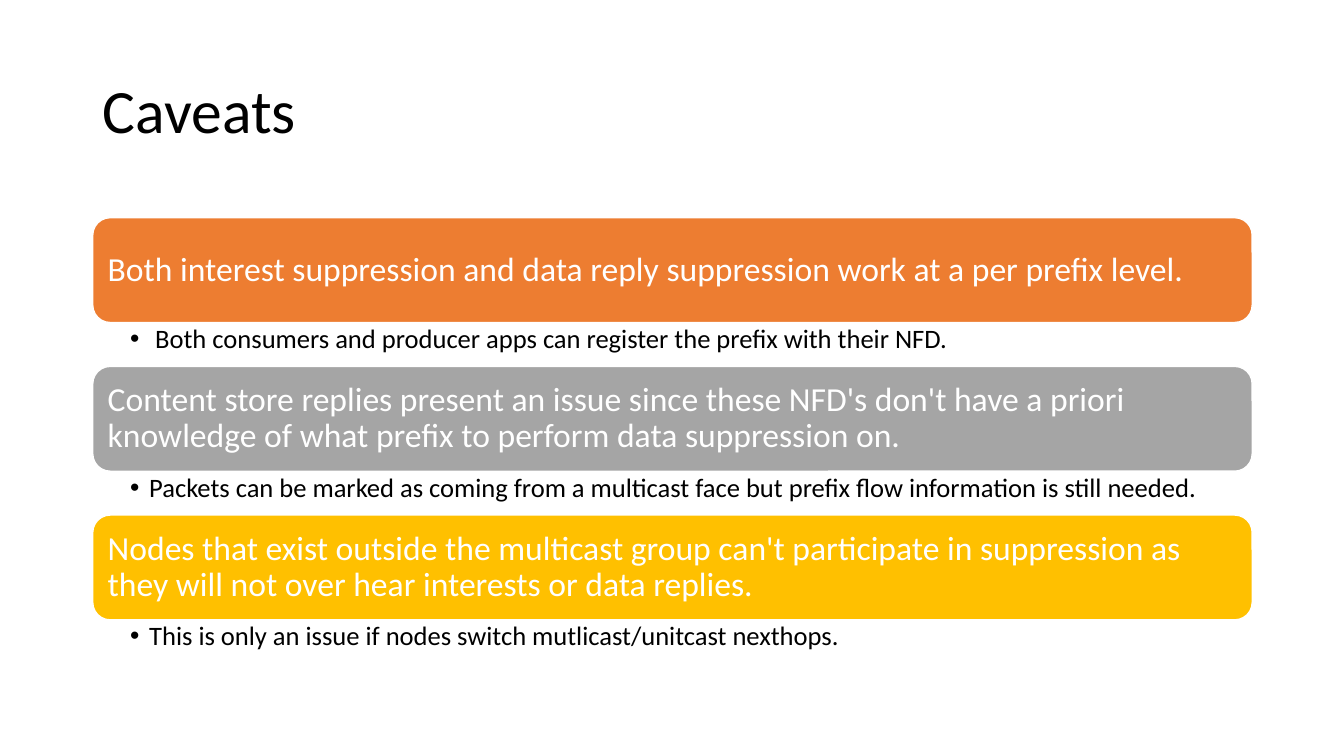
from lxml import etree
from pptx import Presentation
from pptx.dml.color import RGBColor
from pptx.enum.shapes import MSO_SHAPE
from pptx.enum.text import MSO_ANCHOR, MSO_AUTO_SIZE, PP_ALIGN
from pptx.oxml.ns import qn
from pptx.util import Inches, Pt

ROUNDED = MSO_SHAPE.ROUNDED_RECTANGLE
MIDDLE, TOP = MSO_ANCHOR.MIDDLE, MSO_ANCHOR.TOP
LEFT_ALIGNED = PP_ALIGN.LEFT
FIXED_SIZE = MSO_AUTO_SIZE.NONE

HEADING = "Caveats"
CAVEATS = [
    ("ED7D31",
     "Both interest suppression and data reply suppression work at a per prefix level.",
     " Both consumers and producer apps can register the prefix with their NFD."),
    ("A5A5A5",
     "Content store replies present an issue since these NFD's don't have a priori knowledge of what prefix to perform data suppression on.",
     "Packets can be marked as coming from a multicast face but prefix flow information is still needed."),
    ("FFC000",
     "Nodes that exist outside the multicast group can't participate in suppression as they will not over hear interests or data replies.",
     "This is only an issue if nodes switch mutlicast/unitcast nexthops."),
]

LEFT, WIDTH = 0.92, 11.5
FIRST_TOP, PITCH = 2.16, 1.475
BANNER_HEIGHT, DETAIL_HEIGHT = 1.04, 0.43
HANGING = 0.19

HEADING_STYLE = {"size": Pt(44), "color": "000000", "anchor": MIDDLE,
                 "insets": (0.1, 0.05, 0.1, 0.05)}
BANNER_STYLE = {"size": Pt(24), "color": "FFFFFF", "anchor": MIDDLE,
                "insets": (0.1, 0.1, 0.1, 0.1)}
DETAIL_STYLE = {"size": Pt(19), "color": "000000", "anchor": TOP,
                "insets": (0.37, 0.03, 0.19, 0.03)}


def rgb(value):
    return RGBColor.from_string(value)


def write(holder, text, style):
    frame = holder.text_frame
    frame.text = text
    left, top, right, bottom = map(Inches, style["insets"])
    frame_format = {
        "word_wrap": True, "auto_size": FIXED_SIZE,
        "vertical_anchor": style["anchor"],
        "margin_left": left, "margin_top": top,
        "margin_right": right, "margin_bottom": bottom,
    }
    for name, value in frame_format.items():
        setattr(frame, name, value)
    paragraph = frame.paragraphs[0]
    paragraph.alignment = LEFT_ALIGNED
    paragraph.line_spacing = 0.9
    font = paragraph.runs[0].font
    font.name = "Calibri"
    font.size = style["size"]
    font.color.rgb = rgb(style["color"])
    return paragraph


def add_bullet(paragraph):
    properties = paragraph._p.get_or_add_pPr()
    properties.set("lvl", "1")
    properties.set("marL", str(Inches(HANGING)))
    properties.set("indent", str(-Inches(HANGING)))
    etree.SubElement(properties, qn("a:buFont"), typeface="Arial")
    etree.SubElement(properties, qn("a:buChar"), char="•")


def add_banner(slide, top, fill, text):
    banner = slide.shapes.add_shape(
        ROUNDED, Inches(LEFT), Inches(top), Inches(WIDTH), Inches(BANNER_HEIGHT))
    banner.shadow.inherit = False
    banner.fill.solid()
    banner.fill.fore_color.rgb = rgb(fill)
    banner.line.color.rgb = rgb("FFFFFF")
    banner.line.width = Pt(1)
    write(banner, text, BANNER_STYLE)


def add_detail(slide, top, text):
    detail = slide.shapes.add_textbox(
        Inches(LEFT), Inches(top), Inches(WIDTH), Inches(DETAIL_HEIGHT))
    add_bullet(write(detail, text, DETAIL_STYLE))


def main():
    deck = Presentation()
    deck.slide_width, deck.slide_height = Inches(13.33), Inches(7.5)
    slide = deck.slides.add_slide(deck.slide_layouts.get_by_name("Title Only"))

    heading = slide.shapes.title
    heading.left, heading.top = Inches(LEFT), Inches(0.4)
    heading.width, heading.height = Inches(WIDTH), Inches(1.45)
    write(heading, HEADING, HEADING_STYLE)

    for row, (fill, caveat, detail) in enumerate(CAVEATS):
        top = FIRST_TOP + row * PITCH
        add_banner(slide, top, fill, caveat)
        add_detail(slide, top + BANNER_HEIGHT, detail)

    deck.save("out.pptx")


if __name__ == "__main__":
    main()
